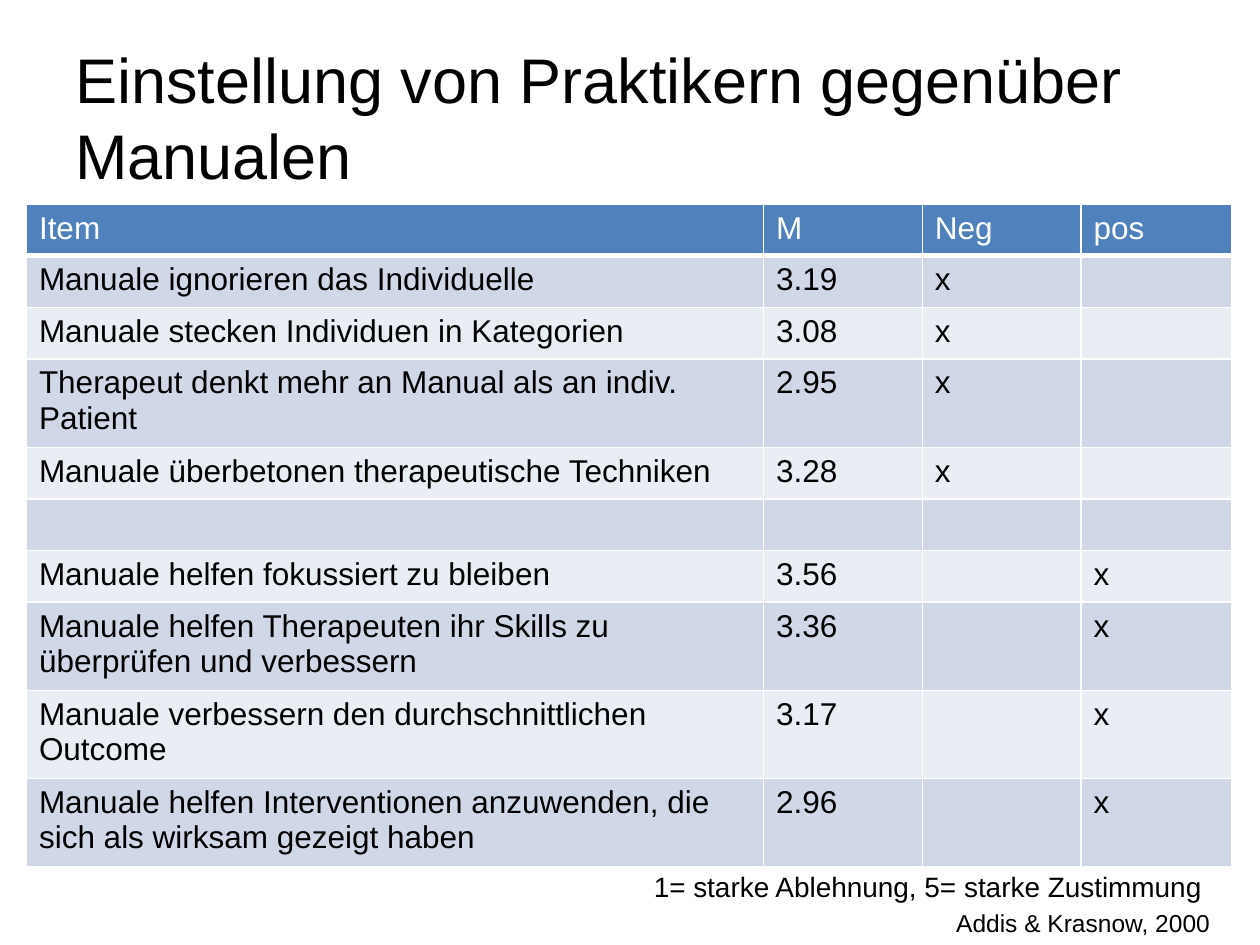
"""Build a slide with a table of practitioners' attitudes towards manuals."""
from lxml.etree import SubElement
from pptx import Presentation
from pptx.dml.color import RGBColor
from pptx.enum.text import MSO_ANCHOR as Anchor
from pptx.oxml.ns import qn
from pptx.util import Inches, Pt

BLACK = RGBColor(0x00, 0x00, 0x00)
WHITE = RGBColor(0xFF, 0xFF, 0xFF)
BLUE = RGBColor(0x4F, 0x81, 0xBD)
BANDS = [RGBColor(0xE9, 0xED, 0xF4), RGBColor(0xD0, 0xD8, 0xE8)]

prs = Presentation()
prs.slide_width, prs.slide_height = Inches(10), Inches(7.5)
COL, ROW = prs.slide_width / 100, prs.slide_height / 75
s = prs.slides.add_slide(prs.slide_layouts[6])


def place(left, top, width, height):
    return int(left * COL), int(top * ROW), int(width * COL), int(height * ROW)


def add_run(p, text, size, color):
    r = p.add_run()
    r.text = text
    r.font.name, r.font.size, r.font.bold = "Arial", Pt(size), False
    r.font.color.rgb = color


texts = [
    ("Einstellung von Praktikern gegenüber Manualen", 36, Anchor.MIDDLE, (5, 3, 90, 12.5)),
    ("1= starke Ablehnung, 5= starke Zustimmung", 16, Anchor.TOP, (50.9, 68.5, 49.1, 3.7)),
    ("Addis & Krasnow, 2000", 14, Anchor.TOP, (74.9, 71.6, 25.1, 3.4)),
]
for text, size, anchor, box in texts:
    tf = s.shapes.add_textbox(*place(*box)).text_frame
    tf.word_wrap = True
    tf.vertical_anchor = anchor
    add_run(tf.paragraphs[0], text, size, BLACK)

items = [
    ("Item", "M", "Neg", "pos"),
    ("Manuale ignorieren das Individuelle", "3.19", "x", ""),
    ("Manuale stecken Individuen in Kategorien", "3.08", "x", ""),
    ("Therapeut denkt mehr an Manual als an indiv. Patient", "2.95", "x", ""),
    ("Manuale überbetonen therapeutische Techniken", "3.28", "x", ""),
    ("", "", "", ""),
    ("Manuale helfen fokussiert zu bleiben", "3.56", "", "x"),
    ("Manuale helfen Therapeuten ihr Skills zu überprüfen und verbessern", "3.36", "", "x"),
    ("Manuale verbessern den durchschnittlichen Outcome", "3.17", "", "x"),
    ("Manuale helfen Interventionen anzuwenden, die sich als wirksam gezeigt haben",
     "2.96", "", "x"),
]
widths = [58.5, 12.6, 12.6, 12]
row_height = 4.1
frame = s.shapes.add_table(len(items), len(widths),
                           *place(2.1, 16.2, sum(widths), row_height * len(items)))
table = frame.table
for column, width in zip(table.columns, widths):
    column.width = int(width * COL)

for i, item in enumerate(items):
    table.rows[i].height = int(row_height * ROW)
    for j, text in enumerate(item):
        cell = table.cell(i, j)
        tcPr = cell._tc.get_or_add_tcPr()
        for side in "LRTB":
            thick = (i, side) in [(0, "B"), (1, "T")]
            ln = SubElement(tcPr, qn(f"a:ln{side}"), w=str(Pt(3 if thick else 1)))
            SubElement(SubElement(ln, qn("a:solidFill")), qn("a:srgbClr"), val=str(WHITE))
        cell.fill.solid()
        cell.fill.fore_color.rgb = BANDS[i % 2] if i else BLUE
        if text:
            add_run(cell.text_frame.paragraphs[0], text, 18, BLACK if i else WHITE)

prs.save("out.pptx")
